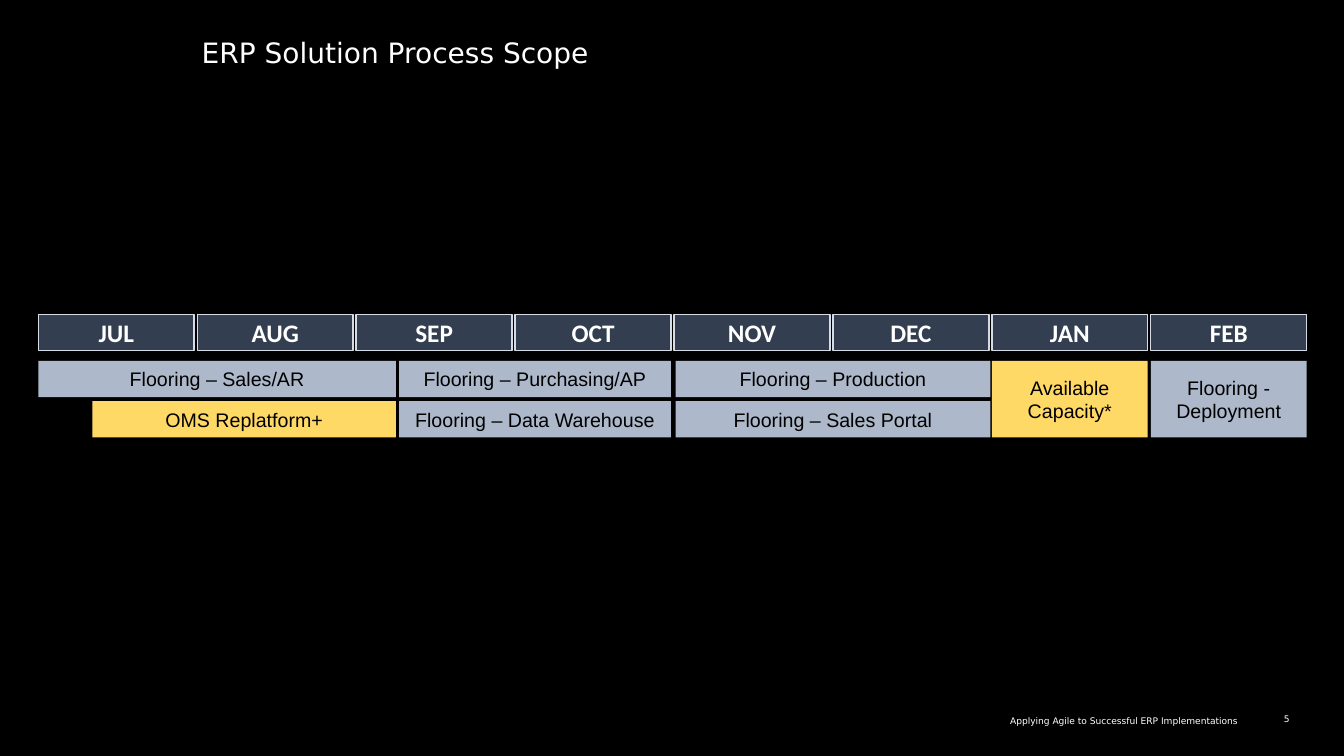
from pptx import Presentation
from pptx.dml.color import RGBColor
from pptx.enum import shapes, text
from pptx.util import Inches, Pt

COLORS = {
    "background": "000000", "white": "FFFFFF", "black": "000000",
    "month": "333F50", "month_line": "D6DCE5",
    "flooring": "ADB9CA", "other": "FFD966",
}

# Timeline grid: eight month columns, two rows of work
MONTHS = ["JUL", "AUG", "SEP", "OCT", "NOV", "DEC", "JAN", "FEB"]
LEFT, RIGHT = 0.38, 12.99
COLUMN = (RIGHT - LEFT) / len(MONTHS)
COLUMN_GAP = 0.03
HEADER_TOP, BARS_TOP = 3.12, 3.58
ROW, BAR_HEIGHT = 0.4, 0.36


def write(frame, words, font, size, color, align, bold=False):
    frame.word_wrap = True
    paragraph = frame.paragraphs[0]
    paragraph.alignment = align
    run = paragraph.add_run()
    run.text = words
    run.font.name = font
    run.font.size = Pt(size)
    run.font.bold = bold
    run.font.color.rgb = RGBColor.from_string(COLORS[color])


def add_bar(start, end, top, height, fill):
    shape = slide.shapes.add_shape(
        shapes.MSO_SHAPE.RECTANGLE,
        Inches(LEFT + start * COLUMN), Inches(top),
        Inches((end - start) * COLUMN - COLUMN_GAP), Inches(height))
    shape.shadow.inherit = False
    shape.fill.solid()
    shape.fill.fore_color.rgb = RGBColor.from_string(COLORS[fill])
    shape.line.fill.background()
    shape.text_frame.vertical_anchor = text.MSO_ANCHOR.MIDDLE
    return shape


presentation = Presentation()
presentation.slide_width = Inches(13.33)
presentation.slide_height = Inches(7.5)
slide = presentation.slides.add_slide(presentation.slide_layouts[5])
slide.background.fill.solid()
slide.background.fill.fore_color.rgb = RGBColor.from_string(COLORS["background"])

# Title, footer and slide number
title = slide.shapes.title
title.left, title.top, title.width, title.height = map(Inches, (2, 0.35, 8.84, 0.76))
footer = slide.shapes.add_textbox(*map(Inches, (6.93, 7.1, 5.35, 0.22)))
number = slide.shapes.add_textbox(*map(Inches, (12.45, 7.08, 0.34, 0.11)))
for box, words, size, align in [
    (title, "ERP Solution Process Scope", 20, text.PP_ALIGN.LEFT),
    (footer, "Applying Agile to Successful ERP Implementations", 6.5, text.PP_ALIGN.RIGHT),
    (number, "5", 6.5, text.PP_ALIGN.RIGHT),
]:
    frame = box.text_frame
    frame.margin_left = frame.margin_top = frame.margin_right = frame.margin_bottom = 0
    frame.vertical_anchor = text.MSO_ANCHOR.TOP
    frame.auto_size = text.MSO_AUTO_SIZE.NONE
    write(frame, words, "DejaVu Sans", size, "white", align)

# Month headers
for column, month in enumerate(MONTHS):
    header = add_bar(column, column + 1, HEADER_TOP, BAR_HEIGHT, "month")
    header.line.color.rgb = RGBColor.from_string(COLORS["month_line"])
    header.line.width = Pt(1)
    write(header.text_frame, month, "Calibri", 18, "white", text.PP_ALIGN.CENTER, True)

# Work bars: label, start and end in months, first row, rows covered, fill
for label, start, end, row, rows, fill in [
    ("Flooring – Sales/AR", 0, 2.27, 0, 1, "flooring"),
    ("Flooring – Purchasing/AP", 2.27, 4, 0, 1, "flooring"),
    ("Flooring – Production", 4.01, 6.01, 0, 1, "flooring"),
    ("OMS Replatform+", 0.34, 2.27, 1, 1, "other"),
    ("Flooring – Data Warehouse", 2.27, 4, 1, 1, "flooring"),
    ("Flooring – Sales Portal", 4.01, 6.01, 1, 1, "flooring"),
    ("Available Capacity*", 6, 7, 0, 2, "other"),
    ("Flooring - Deployment", 7, 8, 0, 2, "flooring"),
]:
    bar = add_bar(start, end, BARS_TOP + row * ROW, BAR_HEIGHT + (rows - 1) * ROW, fill)
    write(bar.text_frame, label, "Arial", 14, "black", text.PP_ALIGN.CENTER)

presentation.save("out.pptx")
